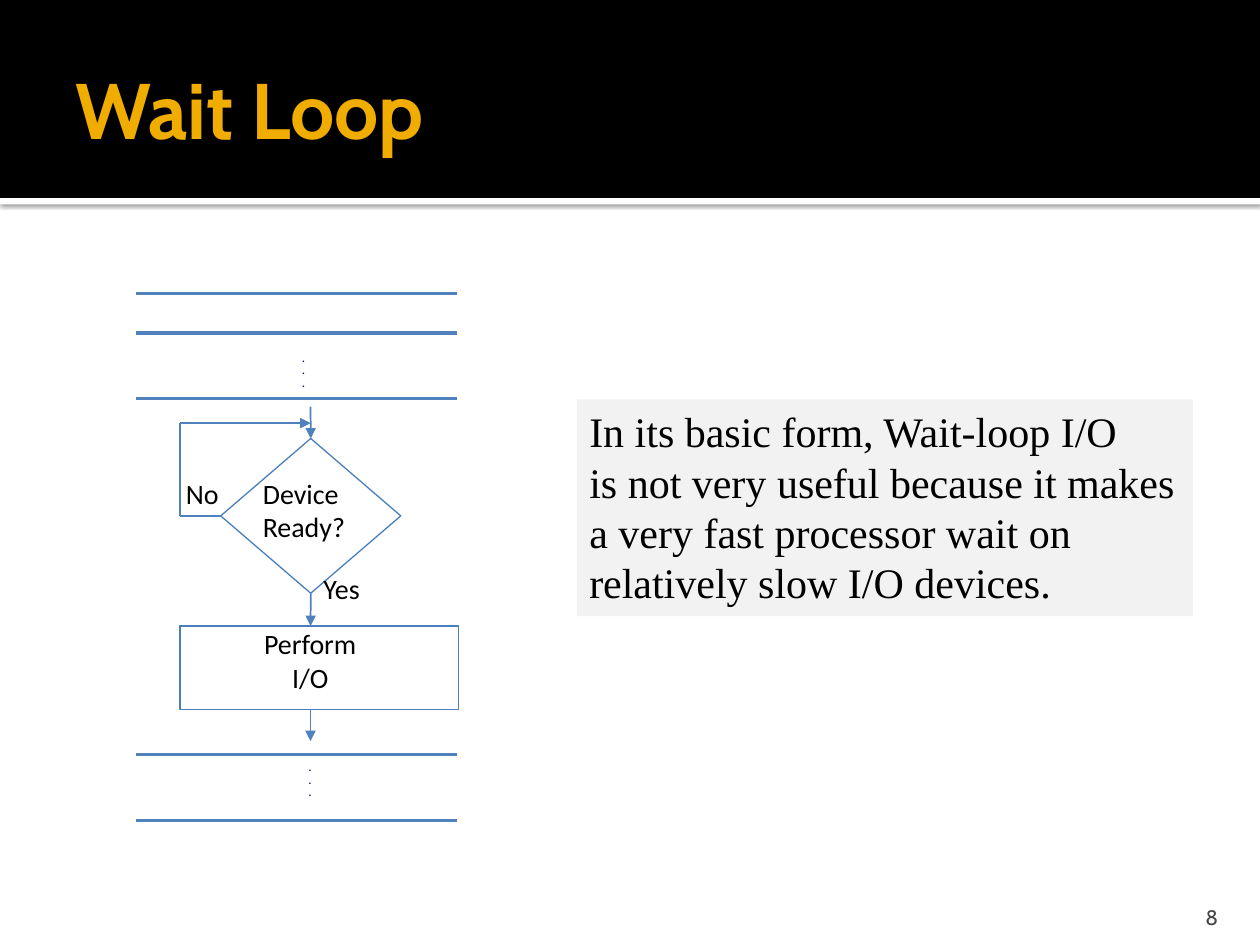
from lxml import etree
from pptx import Presentation
from pptx import util as u
from pptx.dml.color import RGBColor
from pptx.enum import shapes, text
from pptx.oxml.ns import qn

# Content: lengths in centimetres, boxes as (left, top, width, height)
BLUE, OUTLINE = "4F81BD", "4B7EBC"
WIDTH, HEIGHT = 25.4, 19.05
HEADER_BOTTOM = 3.99

CODE_LEFT, CODE_RIGHT = 2.74, 9.22
CODE_LINES = [5.92, 6.71, 8.03, 15.21, 16.54]
AXIS, LOOP_X, LOOP_Y = 6.26, 3.63, 8.53
DECISION = (4.45, 8.84, 3.63, 3.12)
ACTION = (LOOP_X, 12.62, 5.61, 1.68)
FLOW_START, FLOW_END = 8.2, 14.94

DOTS = [".", ".", "."]
DOT_BOXES = [(5.84, 6.96, 0.58, 1.02), (5.97, 15.21, 0.58, 1.02)]
LABELS = [
    (["Device", "Ready?"], (5.05, 9.47, 2.21, 1.63), "LEFT"),
    (["No"], (3.5, 9.47, 1.19, 0.94), "LEFT"),
    (["Yes"], (6.27, 11.4, 1.3, 0.94), "LEFT"),
    (["Perform", "I/O"], (5.05, 12.5, 2.41, 1.63), "CENTER"),
]
NOTE = [
    "In its basic form, Wait-loop I/O",
    "is not very useful because it makes",
    "a very fast processor wait on",
    "relatively slow I/O devices.",
]

presentation = Presentation()
presentation.slide_width, presentation.slide_height = u.Cm(WIDTH), u.Cm(HEIGHT)
slide = presentation.slides.add_slide(presentation.slide_layouts[6])


def color(value):
    return RGBColor.from_string(value)


def add_shape(kind, box, fill=None, line=None):
    shape = slide.shapes.add_shape(kind, *map(u.Cm, box))
    shape.shadow.inherit = False
    if fill:
        shape.fill.solid()
        shape.fill.fore_color.rgb = color(fill)
    else:
        shape.fill.background()
    if line:
        shape.line.color.rgb = color(line)
        shape.line.width = u.Pt(0.75)
    else:
        shape.line.fill.background()
    return shape


def add_text(lines, box, size=16, font="Calibri", fill="000000", bold=False,
             align="LEFT", anchor="TOP", wrap=False, background=None,
             margins=(0.25, 0.13, 0.25, 0.13)):
    shape = slide.shapes.add_textbox(*map(u.Cm, box))
    if background:
        shape.fill.solid()
        shape.fill.fore_color.rgb = color(background)
    frame = shape.text_frame
    frame.word_wrap = wrap
    frame.auto_size = (text.MSO_AUTO_SIZE.NONE if wrap
                       else text.MSO_AUTO_SIZE.SHAPE_TO_FIT_TEXT)
    frame.vertical_anchor = text.MSO_ANCHOR[anchor]
    (frame.margin_left, frame.margin_top,
     frame.margin_right, frame.margin_bottom) = map(u.Cm, margins)
    for index, line in enumerate(lines):
        paragraph = frame.add_paragraph() if index else frame.paragraphs[0]
        paragraph.alignment = text.PP_ALIGN[align]
        run = paragraph.add_run()
        run.text = line
        run.font.size, run.font.name, run.font.bold = u.Pt(size), font, bold
        run.font.color.rgb = color(fill)


def add_line(start, end, width=1, arrow=False):
    connector = slide.shapes.add_connector(
        shapes.MSO_CONNECTOR.STRAIGHT, *map(u.Cm, start + end))
    connector.line.color.rgb = color(BLUE)
    connector.line.width = u.Pt(width)
    if arrow:
        etree.SubElement(connector.line._get_or_add_ln(), qn("a:tailEnd"),
                         type="triangle")
    etree.SubElement(connector._element.spPr, qn("a:effectLst"))
    return connector


# Header band and the white strip that casts a shadow below it
strip = add_shape(shapes.MSO_SHAPE.RECTANGLE, (0, HEADER_BOTTOM, WIDTH, 0.13), "FFFFFF")
effects = strip._element.spPr.find(qn("a:effectLst"))
shadow = etree.SubElement(effects, qn("a:outerShdw"), blurRad=str(u.Pt(2.5)),
                          dist=str(u.Pt(0.8)), dir="5400000", rotWithShape="0")
shade = etree.SubElement(shadow, qn("a:srgbClr"), val="000000")
etree.SubElement(shade, qn("a:alpha"), val="60000")
add_shape(shapes.MSO_SHAPE.RECTANGLE, (0, 0, WIDTH, HEADER_BOTTOM), "000000")
add_text(["Wait Loop"], (1.27, 0.43, 22.86, 3.48), size=45, font="Cabin",
         fill="F0AD00", bold=True, anchor="MIDDLE", wrap=True,
         margins=(0.25, 0.13, 0.13, 0.13))

# Program lines before and after the loop
for y in CODE_LINES:
    add_line((CODE_LEFT, y), (CODE_RIGHT, y), width=2)
for box in DOT_BOXES:
    add_text(DOTS, box, size=6, fill="000090", bold=True)

# Flowchart
decision = add_shape(shapes.MSO_SHAPE.DIAMOND, DECISION, line=OUTLINE)
add_shape(shapes.MSO_SHAPE.RECTANGLE, ACTION, line=OUTLINE)
decision_left, decision_top = DECISION[:2]
decision_middle = decision_top + DECISION[3] / 2
decision_bottom = decision_top + DECISION[3]
action_top, action_bottom = ACTION[1], ACTION[1] + ACTION[3]

entry = add_line((AXIS, FLOW_START), (AXIS, decision_top), arrow=True)
entry.end_connect(decision, 0)
no_branch = add_line((decision_left, decision_middle), (LOOP_X, decision_middle))
no_branch.begin_connect(decision, 1)
add_line((LOOP_X, decision_middle), (LOOP_X, LOOP_Y))
add_line((LOOP_X, LOOP_Y), (AXIS, LOOP_Y), arrow=True)
yes_branch = add_line((AXIS, decision_bottom), (AXIS, action_top), arrow=True)
yes_branch.begin_connect(decision, 2)
add_line((AXIS, action_bottom), (AXIS, FLOW_END), arrow=True)
for lines, box, align in LABELS:
    add_text(lines, box, align=align)

# Remark and slide number
add_text(NOTE, (11.63, 8.05, 12.42, 4.37), size=24, font="Times New Roman",
         background="F2F2F2")
add_text(["8"], (22.78, 17.98, 2.03, 0.76), size=12, font="Cabin", fill="454545",
         align="RIGHT", anchor="BOTTOM", wrap=True, margins=(0.25, 0.13, 0.25, 0))

presentation.save("out.pptx")
